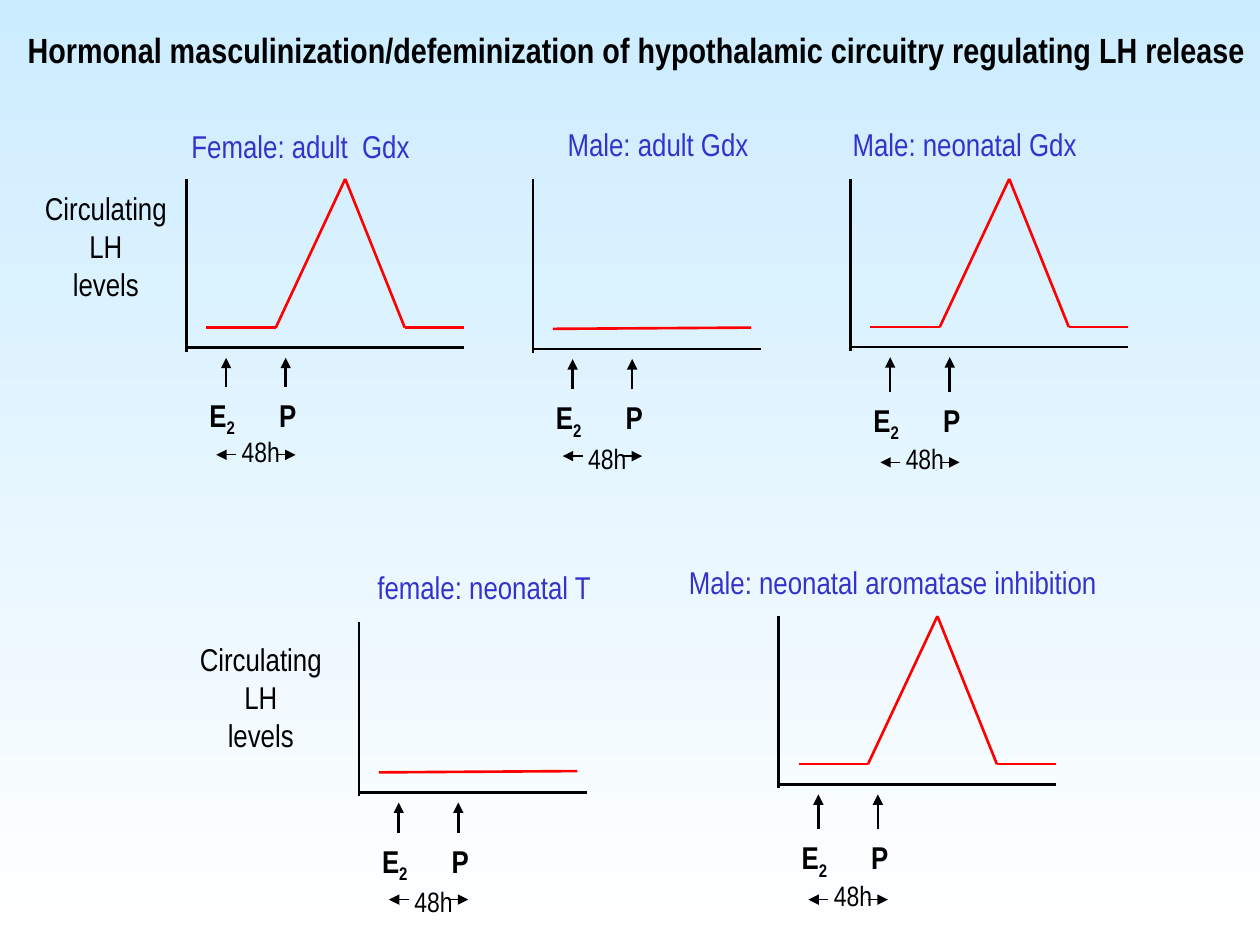
from collections import namedtuple
from itertools import pairwise

from lxml.etree import SubElement
from pptx import Presentation
from pptx.dml.color import RGBColor as Rgb
from pptx.enum.shapes import MSO_CONNECTOR as Connector
from pptx.enum.text import MSO_ANCHOR as Anchor, MSO_AUTO_SIZE as AutoSize, PP_ALIGN as Align
from pptx.oxml.ns import qn
from pptx.util import Cm, Inches, Pt

COLORS = {
    "sky": "CCECFF",
    "white": "FFFFFF",
    "ink": "000000",
    "heading": "3333CC",
    "trace": "FF0000",
}
FONT = "Arial Narrow"
COL, ROW = Cm(0.4), Inches(0.1)

# left and top are inches; the other measures are rows below the top of the axis.
Panel = namedtuple("Panel", "heading left top surge heading_row axis_row dose_row hours_row span_row")
PANELS = [
    Panel("Female: adult  Gdx", 1.48, 1.42, True, -2.6, 13.4, 18.9, 21.65, 21.9),
    Panel("Male: adult Gdx", 4.23, 1.42, False, -2.8, 13.5, 19.1, 22.15, 22),
    Panel("Male: neonatal Gdx", 6.75, 1.42, True, -2.8, 13.35, 19.3, 22.15, 22.5),
    Panel("female: neonatal T", 2.85, 4.94, False, -2.8, 13.5, 19.1, 22.15, 22),
    Panel("Male: neonatal aromatase inhibition", 6.18, 4.89, True, -2.7, 13.35, 19.3, 22.15, 22.5),
]
LEVEL_LABELS = [(0.84, 1.95), (2.07, 5.53)]


def style(run, size, color="ink", bold=False):
    font = run.font
    font.name, font.size, font.bold = FONT, Pt(size), bold
    font.color.rgb = Rgb.from_string(COLORS[color])


def add_label(slide, center, width, height, text, size=18, color="ink", bold=False):
    """Place centred text around a point; lengths are EMU."""
    x, y = center
    box = slide.shapes.add_textbox(int(x - width / 2), int(y - height / 2), width, height)
    frame = box.text_frame
    frame.text = text
    frame.word_wrap = False
    frame.vertical_anchor = Anchor.MIDDLE
    for paragraph in frame.paragraphs:
        paragraph.alignment = Align.CENTER
        for run in paragraph.runs:
            style(run, size, color, bold)
    return frame


def add_line(slide, start, end, color="ink", width=1.5, arrow=False):
    line = slide.shapes.add_connector(Connector.STRAIGHT, *map(int, (*start, *end)))
    line.line.color.rgb = Rgb.from_string(COLORS[color])
    line.line.width = Pt(width)
    if arrow:
        SubElement(line.line._get_or_add_ln(), qn("a:tailEnd"), type="triangle")
    SubElement(line._element.spPr, qn("a:effectLst"))


def add_panel(slide, panel):
    def at(col, row):
        return Inches(panel.left) + col * COL, Inches(panel.top) + row * ROW

    add_label(slide, at(5.75 if panel.surge else 6.3, panel.heading_row),
              Inches(3.45), Inches(0.4), panel.heading, color="heading")
    add_axes_and_trace(slide, panel, at)
    add_doses(slide, panel, at)


def add_axes_and_trace(slide, panel, at):
    floor = panel.axis_row
    base = floor - 1.6
    add_line(slide, at(0, 0), at(0, floor + 0.3))
    add_line(slide, at(0, floor), at(14 if panel.surge else 11.5, floor))
    if panel.surge:
        trace = [(1, base), (4.5, base), (8, 0), (11, base), (14, base)]
    else:
        trace = [(1, base), (11, base - 0.1)]
    for start, end in pairwise(trace):
        add_line(slide, at(*start), at(*end), "trace")


def add_doses(slide, panel, at):
    """Mark the E2 and P injections and the time between them."""
    for col in (2, 5):
        add_line(slide, at(col, panel.dose_row - 2.4), at(col, panel.axis_row + 0.8), arrow=True)

    estradiol = add_label(slide, at(1.8, panel.dose_row), Inches(0.43), Inches(0.34), "E", bold=True)
    subscript = estradiol.paragraphs[0].add_run()
    subscript.text = "2"
    style(subscript, 18, bold=True)
    subscript.font._element.set("baseline", "-25000")
    add_label(slide, at(5.1, panel.dose_row - 0.2), Inches(0.34), Inches(0.4), "P", bold=True)

    add_label(slide, at(3.75, panel.hours_row), Inches(0.5), Inches(0.37), "48h", size=16)
    for inner, outer in ((2.5, 1.5), (4.5, 5.5)):
        add_line(slide, at(inner, panel.span_row), at(outer, panel.span_row), width=0.75, arrow=True)


def add_title(slide, left, top, width, height):
    title = slide.shapes.title
    title.left, title.top, title.width, title.height = left, top, width, height
    frame = title.text_frame
    frame.text = "Hormonal masculinization/defeminization of hypothalamic circuitry regulating LH release"
    frame.word_wrap = True
    frame.auto_size = AutoSize.NONE
    frame.vertical_anchor = Anchor.MIDDLE
    frame.margin_right = 0
    frame.paragraphs[0].alignment = Align.LEFT
    style(frame.paragraphs[0].runs[0], 20, bold=True)


def paint_background(slide):
    fill = slide.background.fill
    fill.gradient()
    fill.gradient_angle = 270
    for stop, name in zip(fill.gradient_stops, ("sky", "white")):
        stop.color.rgb = Rgb.from_string(COLORS[name])


def main():
    deck = Presentation()
    deck.slide_width, deck.slide_height = Inches(10), Inches(7.5)
    slide = deck.slides.add_slide(deck.slide_layouts[5])
    paint_background(slide)
    add_title(slide, Inches(0.12), Inches(0.16), Inches(9.88), Inches(0.47))
    for panel in PANELS:
        add_panel(slide, panel)
    for x, y in LEVEL_LABELS:
        add_label(slide, (Inches(x), Inches(y)), Inches(1.18), Inches(1.07), "Circulating\nLH\nlevels")
    deck.save("out.pptx")


if __name__ == "__main__":
    main()
